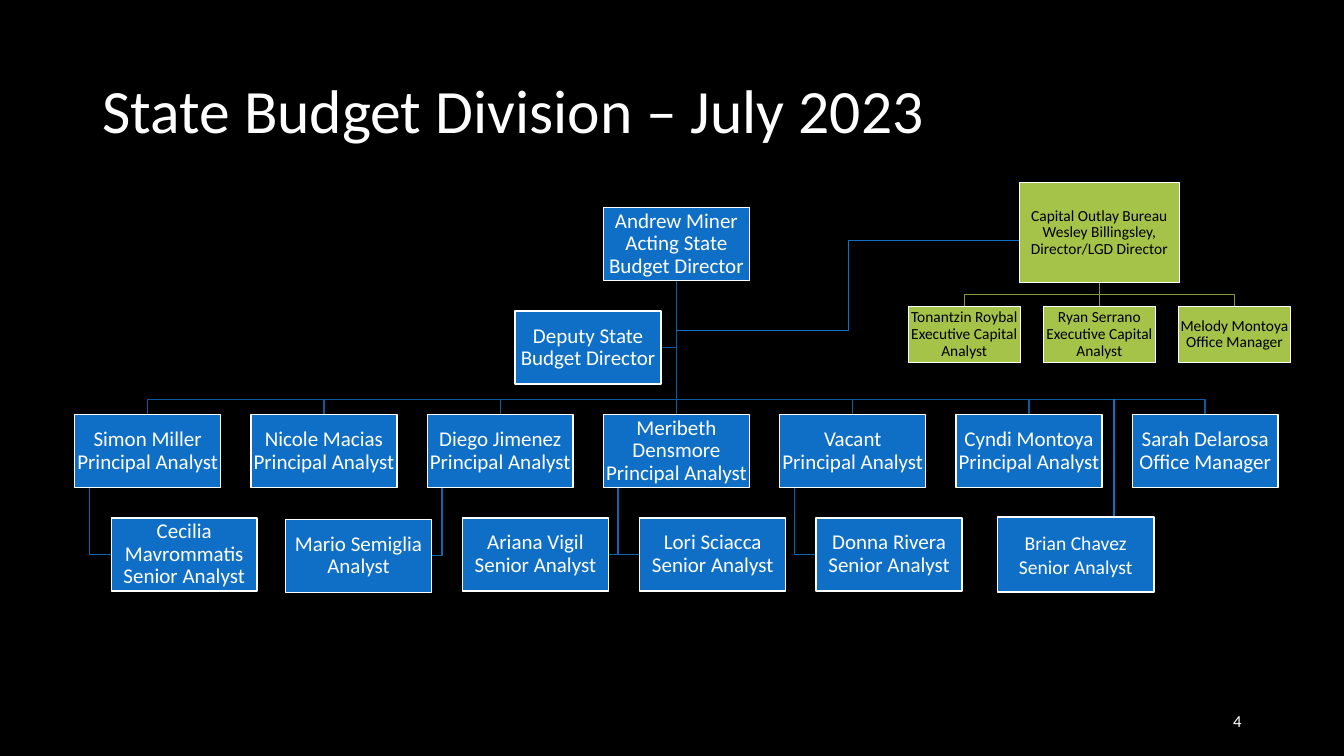
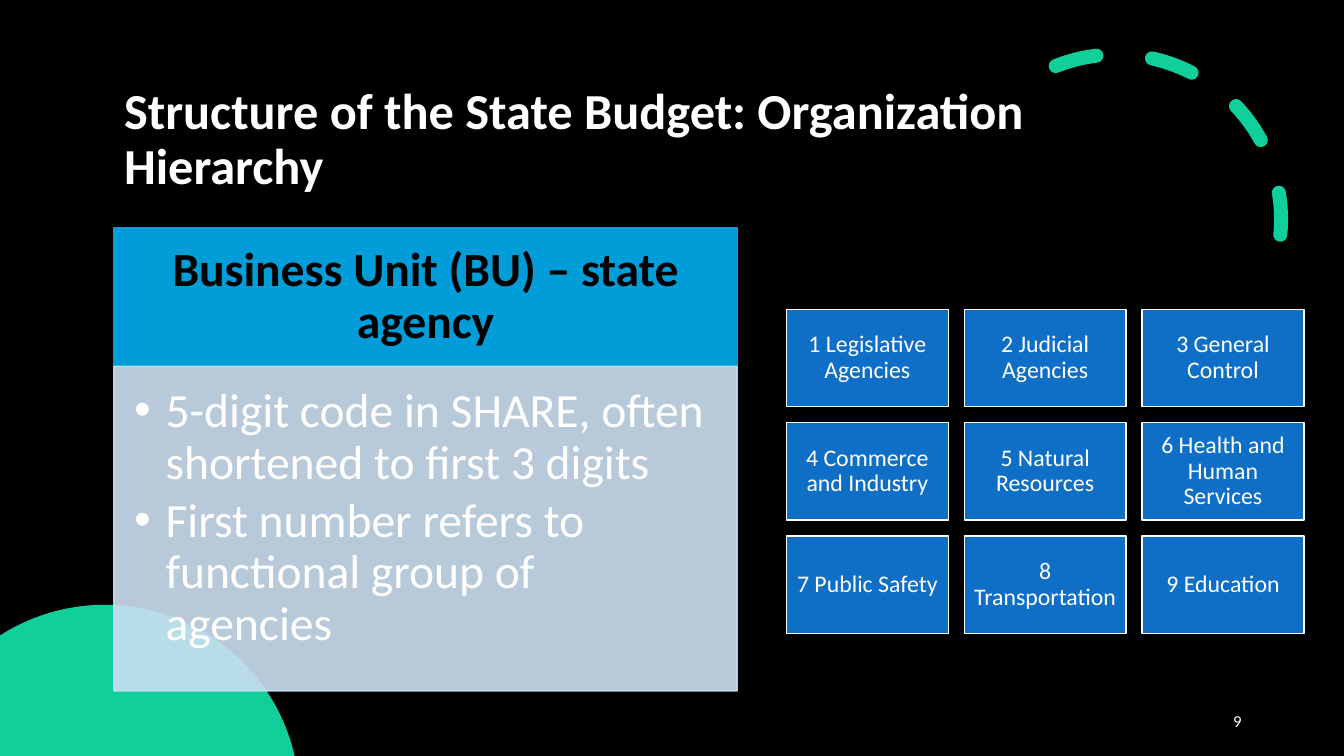
import math
from dataclasses import dataclass

from lxml import etree
from pptx import Presentation
from pptx.dml.color import RGBColor
from pptx.enum import dml, shapes, text
from pptx.oxml.ns import qn
from pptx.util import Pt

# Shared look
FONT = "Calibri"
BLACK, WHITE = "000000", "FFFFFF"
BLUE, DEEP, MID = "0F6FC6", "0C599F", "0E65B4"
LIME, OLIVE = "A5C249", "849B3A"
MINT, CYAN, PALE = "10CF9B", "009DD9", "CCDFF1"
LEFT, MIDDLE = text.PP_ALIGN.LEFT, text.MSO_ANCHOR.MIDDLE
CENTER, RIGHT = text.PP_ALIGN.CENTER, text.PP_ALIGN.RIGHT


@dataclass(frozen=True)
class Look:
    fill: str
    ink: str
    size: float
    inset: tuple = (1, 1, 1, 1)
    edge: str = WHITE
    bold: bool = False
    space: float = 0.9
    align: int = CENTER
    anchor: int = MIDDLE


@dataclass(frozen=True)
class Box:
    words: str
    x: float
    y: float
    w: float
    h: float


STAFF = Look(BLUE, WHITE, 15)
SENIOR = Look(BLUE, WHITE, 14, (7.2, 3.6, 7.2, 3.6), space=1)
BUREAU = Look(LIME, BLACK, 11)
GROUP = Look(BLUE, WHITE, 17, (5, 5, 5, 5))
HEAD = Look(CYAN, BLACK, 34, (19, 11, 19, 11), CYAN, True)
BODY = Look(PALE, WHITE, 34, (14.4, 14.4, 19, 21.6), PALE,
            align=LEFT, anchor=text.MSO_ANCHOR.TOP)


def color(code: str) -> RGBColor:
    return RGBColor.from_string(code)


def place(item, x: float, y: float, w: float, h: float) -> None:
    item.left, item.top, item.width, item.height = Pt(x), Pt(y), Pt(w), Pt(h)


def write(frame, words: str, size: float, ink: str, align: int,
          bold: bool = False, space: float = 1, anchor: int = MIDDLE) -> None:
    frame.text = words
    frame.word_wrap = True
    frame.auto_size = text.MSO_AUTO_SIZE.NONE
    frame.vertical_anchor = anchor
    for para in frame.paragraphs:
        para.alignment, para.line_spacing = align, space
        for run in para.runs:
            font = run.font
            font.name, font.size, font.bold = FONT, Pt(size), bold
            font.color.rgb = color(ink)


def stroke(item, ink: str, width: float = 1) -> None:
    item.line.color.rgb = color(ink)
    item.line.width = Pt(width)


def draw_box(slide, box: Box, look: Look):
    rect = slide.shapes.add_shape(
        shapes.MSO_SHAPE.RECTANGLE, Pt(box.x), Pt(box.y), Pt(box.w), Pt(box.h))
    rect.shadow.inherit = False
    rect.fill.solid()
    rect.fill.fore_color.rgb = color(look.fill)
    stroke(rect, look.edge)
    frame = rect.text_frame
    (frame.margin_left, frame.margin_top,
     frame.margin_right, frame.margin_bottom) = map(Pt, look.inset)
    write(frame, box.words, look.size, look.ink, look.align,
          look.bold, look.space, look.anchor)
    return rect


def outline(slide, spots: list, close: bool = False):
    first, *rest = [(Pt(x), Pt(y)) for x, y in spots]
    pen = slide.shapes.build_freeform(*first, scale=1.0)
    pen.add_line_segments(rest, close=close)
    shape = pen.convert_to_shape()
    shape.shadow.inherit = False
    return shape


def bend(slide, ink: str, *spots: tuple) -> None:
    shape = outline(slide, list(spots))
    shape.fill.background()
    stroke(shape, ink)


def link(slide, ink: str, start: tuple, end: tuple,
         kind: int = shapes.MSO_CONNECTOR.STRAIGHT) -> None:
    wire = slide.shapes.add_connector(kind, *map(Pt, start + end))
    stroke(wire, ink)
    etree.SubElement(wire.element.spPr, qn("a:effectLst"))


def tree(slide, ink: str, stem: float, top: float, bus: float,
         ends: list, foot: float) -> None:
    for end in ends:
        if abs(end - stem) < 1:
            link(slide, ink, (stem, top), (stem, foot))
        else:
            bend(slide, ink, (stem, top), (stem, bus), (end, bus), (end, foot))


def new_slide(deck, title: str, spot: tuple, size: float, bold: bool, page: int):
    slide = deck.slides.add_slide(deck.slide_layouts[5])
    head = slide.shapes.title
    place(head, *spot)
    write(head.text_frame, title, size, WHITE, LEFT, bold, 0.9)
    note = slide.shapes.add_textbox(Pt(678), Pt(500.5), Pt(216), Pt(28.8))
    write(note.text_frame, str(page), 12, WHITE, RIGHT)
    return slide


def org_slide(deck) -> None:
    slide = new_slide(deck, "State Budget Division – July 2023",
                      (66, 28.8, 828, 104.4), 44, False, 4)
    wide, tall, left, step = 104.2, 52.1, 53.4, 125.9
    row, low = 296.2, 370
    stem, top = left + 3 * step + wide / 2, 200.2
    leads = ["Simon Miller Principal Analyst", "Nicole Macias Principal Analyst",
             "Diego Jimenez Principal Analyst",
             "Meribeth Densmore Principal Analyst", "Vacant\nPrincipal Analyst",
             "Cyndi Montoya Principal Analyst", "Sarah Delarosa Office Manager"]
    lefts = [left + step * i for i in range(len(leads))]

    # Lines of the main chart
    tree(slide, DEEP, stem, top, 285.3, [x + wide / 2 for x in lefts], row)
    bend(slide, DEEP, (stem, top), (stem, 248.4), (472.2, 248.4))
    for lead, end, y in ((0, 79.5, 396), (2, 308, 397), (3, 434.4, 396),
                         (3, 457, 396), (4, 583, 396)):
        x = lefts[lead] + 10.4
        bend(slide, MID, (x, row + tall), (x, y), (end, y))

    # Boxes of the main chart
    staff = [Box("Andrew Miner\nActing State Budget Director",
                 lefts[3], 148.4, wide, tall),
             Box("Deputy State Budget Director", 368, 222.3, wide, tall)]
    staff += [Box(words, x, row, wide, tall) for words, x in zip(leads, lefts)]
    staff += [Box(words, x, y, wide, tall) for words, x, y in (
        ("Cecilia Mavrommatis Senior Analyst", 79.5, low),
        ("Mario Semiglia Analyst", 204, low + 1),
        ("Ariana Vigil Senior Analyst", 330.4, low),
        ("Lori Sciacca Senior Analyst", 457, low),
        ("Donna Rivera Senior Analyst", 583, low))]
    for box in staff:
        draw_box(slide, box, STAFF)

    # Capital outlay bureau
    link(slide, BLUE, (stem, 236), (729, 172), shapes.MSO_CONNECTOR.ELBOW)
    near, gap, small = 648.8, 96.5, 80
    tree(slide, OLIVE, 785.3, 202.2, 210.5,
         [near + gap * i + small / 2 for i in range(3)], 219)
    draw_box(slide, Box("Capital Outlay Bureau\nWesley Billingsley, "
                        "Director/LGD Director", 728.2, 130.4, 114.2, 71.6), BUREAU)
    for i, words in enumerate(("Tonantzin Roybal\nExecutive Capital Analyst",
                               "Ryan Serrano\nExecutive Capital Analyst",
                               "Melody Montoya\nOffice Manager")):
        draw_box(slide, Box(words, near + gap * i, 219, small, 39.8), BUREAU)

    # Extra senior analyst
    link(slide, BLUE, (795.7, 285.3), (795.7, 369.4))
    draw_box(slide, Box("Brian Chavez Senior Analyst", 712.5, 369.4, 111.8, 53.4),
             SENIOR)


def unit_slide(deck) -> None:
    slide = new_slide(deck, "Structure of the State Budget: Organization Hierarchy",
                      (81.4, 48.2, 791.3, 104.4), 36, True, 9)

    # Dashed arc
    arc = slide.shapes.add_shape(shapes.MSO_SHAPE.ARC,
                                 Pt(679.7), Pt(38.9), Pt(235.4), Pt(235.4))
    arc.shadow.inherit = False
    arc.adjustments[0], arc.adjustments[1] = 144.418, 0
    arc.rotation = 66.1
    arc.fill.background()
    stroke(arc, MINT, 10)
    arc.line.dash_style = dml.MSO_LINE.DASH
    props = arc.element.spPr
    props.find(qn("a:xfrm")).set("flipH", "1")
    props.find(qn("a:ln")).set("cap", "rnd")

    # Corner disc, cut at the slide edges
    mid, base, rad, steps = 75, 571, 139, 60
    start, end = math.acos(-mid / rad), math.asin((base - 540) / rad)
    turns = [start + (end - start) * i / steps for i in range(steps + 1)]
    rim = [(mid + rad * math.cos(t), base - rad * math.sin(t)) for t in turns]
    disc = outline(slide, rim + [(0, 540)], close=True)
    disc.fill.solid()
    disc.fill.fore_color.rgb = color(MINT)
    disc.line.fill.background()

    # Business unit panel
    draw_box(slide, Box("Business Unit (BU) – state agency",
                        81.4, 162.5, 445.2, 99.2), HEAD)
    panel = draw_box(slide, Box(
        "5-digit code in SHARE, often shortened to first 3 digits\n"
        "First number refers to functional group of agencies",
        81.4, 261.7, 445.2, 231.8), BODY)
    for tint in panel.element.spPr.iter(qn("a:srgbClr")):
        etree.SubElement(tint, qn("a:alpha"), val="90000")
    for para in panel.text_frame.paragraphs:
        para.space_after = Pt(5.1)
        props = para.runs[0].font and para.line_spacing and para
        marks = props._p.get_or_add_pPr()
        marks.set("marL", str(Pt(22.5)))
        marks.set("indent", str(Pt(-22.5)))
        etree.SubElement(marks, qn("a:buFont"), typeface="Arial")
        etree.SubElement(marks, qn("a:buChar"), char="•")

    # Grid of agency groups
    groups = ("1 Legislative Agencies", "2 Judicial Agencies", "3 General Control",
              "4 Commerce and Industry", "5 Natural Resources",
              "6 Health and Human Services", "7 Public Safety",
              "8 Transportation", "9 Education")
    for i, words in enumerate(groups):
        down, over = divmod(i, 3)
        draw_box(slide, Box(words, 561.8 + 127 * over, 221 + 81 * down, 115.6, 69.4),
                 GROUP)


def main() -> None:
    deck = Presentation()
    deck.slide_width, deck.slide_height = Pt(960), Pt(540)
    back = deck.slide_master.background.fill
    back.solid()
    back.fore_color.rgb = color(BLACK)
    org_slide(deck)
    unit_slide(deck)
    deck.save("out.pptx")


if __name__ == "__main__":
    main()
